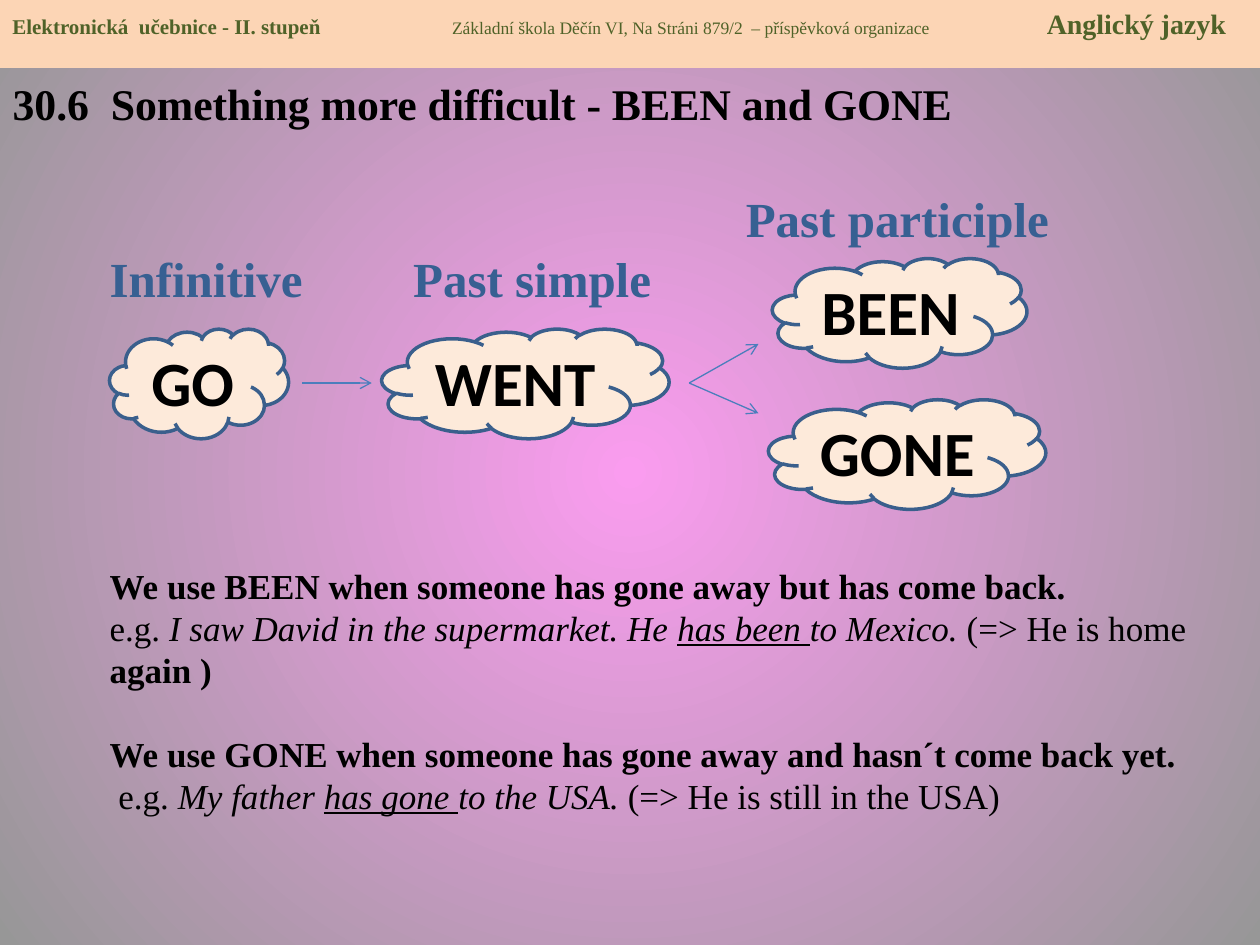
from lxml.etree import SubElement
from pptx import Presentation
from pptx.dml.color import RGBColor
from pptx.enum.shapes import MSO_CONNECTOR as CONN, MSO_SHAPE as SHAPE
from pptx.enum.text import MSO_ANCHOR as ANCHOR, PP_ALIGN as ALIGN
from pptx.oxml.ns import qn
from pptx.util import Inches, Pt

PINK = RGBColor(0xFA, 0x9C, 0xEF)
GREY = RGBColor(0x97, 0x97, 0x97)
PEACH = RGBColor(0xFC, 0xD5, 0xB5)
CREAM = RGBColor(0xFD, 0xEA, 0xDA)
GREEN = RGBColor(0x4F, 0x62, 0x28)
BLUE = RGBColor(0x37, 0x60, 0x92)
OUTLINE = RGBColor(0x3A, 0x5F, 0x8C)
ARROW = RGBColor(0x4B, 0x7E, 0xBC)
BLACK = RGBColor(0, 0, 0)
SERIF = "Times New Roman"

TITLE = "30.6  Something more difficult - BEEN and GONE"
BANNER = [
    ("Elektronická  učebnice - II. stupeň", 12, True),
    ("\tZákladní škola Děčín VI, Na Stráni 879/2  – příspěvková organizace", 10, False),
    ("\tAnglický jazyk", 16, True),
]
BANNER_TABS = [3.49, 8.21]
LABELS = [
    ("Infinitive", 0.87, 1.97),
    ("Past simple", 3.28, 1.97),
    ("Past participle", 5.92, 1.5),
]
CLOUD_HEIGHT = 0.87
CLOUDS = [
    ("GO", 0.87, 2.61, 1.42),
    ("WENT", 3.03, 2.61, 2.28),
    ("GONE", 6.1, 3.17, 2.2),
    ("BEEN", 6.13, 2.05, 2.02),
]
ARROWS = [
    (2.4, 3.04, 2.95, 3.04),
    (5.47, 3.04, 6.02, 2.73),
    (5.47, 3.04, 6.02, 3.28),
]
RULES = [
    (0, [("We use BEEN when someone has gone away but has come back.", "b")]),
    (0, [("e.g. ", ""), ("I saw David in the supermarket. He ", "i"), ("has been ", "iu"),
         ("to Mexico. ", "i"), ("(=> He is home", "")]),
    (0, [("again )", "b")]),
    (24, [("We use GONE when someone has gone away and hasn´t come back yet.", "b")]),
    (0, [(" e.g. ", ""), ("My father ", "i"), ("has gone ", "iu"),
         ("to the USA. ", "i"), ("(=> He is still in the USA)", "")]),
]


def set_font(font, size, color, bold=None, name=SERIF):
    font.name, font.size, font.bold = name, Pt(size), bold
    font.color.rgb = color


def place(sp, *box):
    sp.left, sp.top, sp.width, sp.height = map(Inches, box)


def add_filled(s, kind, box, color):
    sp = s.shapes.add_shape(kind, *map(Inches, box))
    sp.shadow.inherit = False
    sp.fill.solid()
    sp.fill.fore_color.rgb = color
    return sp


def add_background(s):
    fill = s.background.fill
    fill.gradient()
    for stop, color in zip(fill.gradient_stops, (PINK, GREY)):
        stop.color.rgb = color
    grad = s.element.find(".//" + qn("a:gradFill"))
    grad.remove(grad.find(qn("a:lin")))
    circle = SubElement(grad, qn("a:path"), {"path": "circle"})
    SubElement(circle, qn("a:fillToRect"), dict.fromkeys("ltrb", "50000"))


def add_banner(s):
    sp = add_filled(s, SHAPE.RECTANGLE, (0, 0, 10, 0.54), PEACH)
    sp.line.fill.background()
    tf = sp.text_frame
    tf.vertical_anchor = ANCHOR.TOP
    p = tf.paragraphs[0]
    p.alignment = ALIGN.LEFT
    tabs = SubElement(p._p.get_or_add_pPr(), qn("a:tabLst"))
    for pos in BANNER_TABS:
        SubElement(tabs, qn("a:tab"), {"pos": str(Inches(pos)), "algn": "l"})
    for text, size, bold in BANNER:
        r = p.add_run()
        r.text = text
        set_font(r.font, size, GREEN, bold)


def add_title(s):
    sp = s.shapes.title
    place(sp, 0, 0.57, 10, 0.5)
    tf = sp.text_frame
    tf.text = TITLE
    tf.vertical_anchor = ANCHOR.MIDDLE
    p = tf.paragraphs[0]
    p.alignment = ALIGN.LEFT
    set_font(p.font, 25, BLACK, True)


def add_rules(s):
    sp = s.placeholders[1]
    place(sp, 0.77, 4.43, 9, 2.4)
    tf = sp.text_frame
    for i, (before, runs) in enumerate(RULES):
        p = tf.add_paragraph() if i else tf.paragraphs[0]
        p.space_before, p.line_spacing = Pt(before), Pt(24)
        set_font(p.font, 20, BLACK)
        pPr = p._p.get_or_add_pPr()
        pPr.set("marL", "0")
        pPr.set("indent", "0")
        pPr.insert_element_before(pPr.makeelement(qn("a:buNone")), "a:tabLst", "a:defRPr")
        for text, style in runs:
            r = p.add_run()
            r.text = text
            r.font.bold = "b" in style
            r.font.italic = "i" in style
            r.font.underline = "u" in style


def add_label(s, text, left, top):
    tf = s.shapes.add_textbox(*map(Inches, (left, top, 2.6, 0.46))).text_frame
    tf.margin_left = tf.margin_right = tf.margin_top = tf.margin_bottom = 0
    tf.word_wrap = True
    tf.text = text
    set_font(tf.paragraphs[0].font, 28, BLUE, True)


def add_cloud(s, text, left, top, width):
    sp = add_filled(s, SHAPE.CLOUD, (left, top, width, CLOUD_HEIGHT), CREAM)
    sp.line.color.rgb, sp.line.width = OUTLINE, Pt(2)
    tf = sp.text_frame
    tf.text = text
    tf.vertical_anchor = ANCHOR.MIDDLE
    p = tf.paragraphs[0]
    p.alignment = ALIGN.CENTER
    set_font(p.font, 36, BLACK, True, "Calibri")


def add_arrow(s, *ends):
    c = s.shapes.add_connector(CONN.STRAIGHT, *map(Inches, ends))
    c.line.color.rgb, c.line.width = ARROW, Pt(0.75)
    SubElement(c.line._get_or_add_ln(), qn("a:tailEnd"), {"type": "arrow"})
    SubElement(c._element.spPr, qn("a:effectLst"))


def main():
    prs = Presentation()
    prs.slide_width, prs.slide_height = Inches(10), Inches(7.5)
    s = prs.slides.add_slide(prs.slide_layouts[1])
    add_background(s)
    add_title(s)
    add_rules(s)
    add_banner(s)
    for label in LABELS:
        add_label(s, *label)
    for cloud in CLOUDS:
        add_cloud(s, *cloud)
    for arrow in ARROWS:
        add_arrow(s, *arrow)
    prs.save("out.pptx")


if __name__ == "__main__":
    main()
